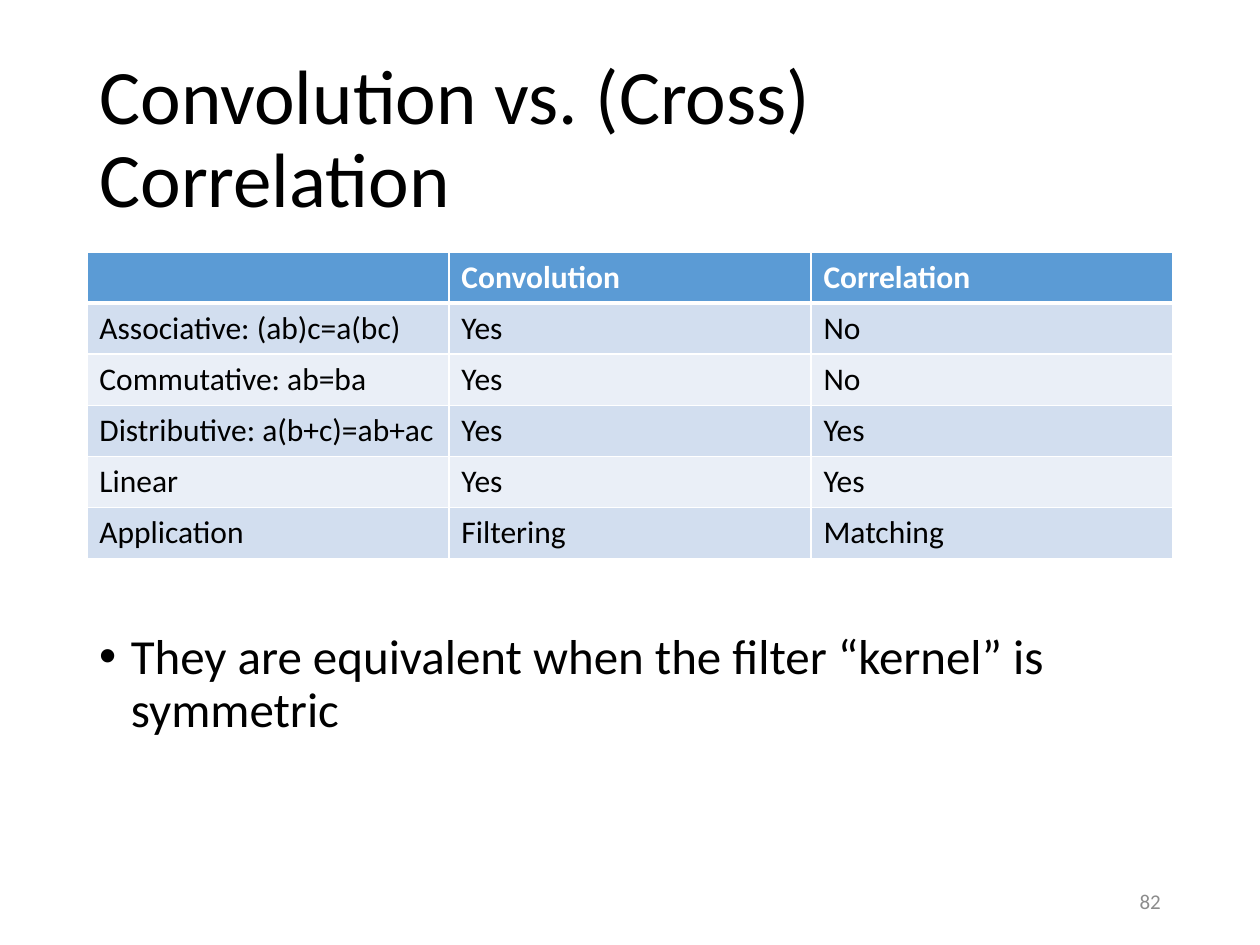
from lxml import etree
from pptx import Presentation
from pptx.dml.color import RGBColor
from pptx.enum.text import MSO_ANCHOR, PP_ALIGN
from pptx.oxml.ns import qn
from pptx.util import Cm, Pt

MIDDLE, TOP = MSO_ANCHOR.MIDDLE, MSO_ANCHOR.TOP
LEFT_ALIGN, RIGHT_ALIGN = PP_ALIGN.LEFT, PP_ALIGN.RIGHT
TITLE_ONLY = 5

BLACK = RGBColor(0x00, 0x00, 0x00)
WHITE = RGBColor(0xFF, 0xFF, 0xFF)
GRAY = RGBColor(0x8C, 0x8C, 0x8C)
HEADER_BLUE = RGBColor(0x5B, 0x9B, 0xD5)
BANDS = (RGBColor(0xEA, 0xEF, 0xF7), RGBColor(0xD2, 0xDE, 0xEF))

FONT = "Calibri"
MARGIN = Cm(1.75)
CONTENT_WIDTH = Cm(21.9)
ROW_HEIGHT = Cm(1.03)

COMPARISON = (
    ("", "Convolution", "Correlation"),
    ("Associative: (ab)c=a(bc)", "Yes", "No"),
    ("Commutative: ab=ba", "Yes", "No"),
    ("Distributive: a(b+c)=ab+ac", "Yes", "Yes"),
    ("Linear", "Yes", "Yes"),
    ("Application", "Filtering", "Matching"),
)


def add_run(para, text, size, color, bold=False):
    span = para.add_run()
    span.text = text
    span.font.name = FONT
    span.font.size = Pt(size)
    span.font.bold = bold
    span.font.color.rgb = color


def set_bullet(para, indent):
    properties = para._p.get_or_add_pPr()
    properties.set("marL", str(indent))
    properties.set("indent", str(-indent))
    etree.SubElement(properties, qn("a:buFont"), typeface="Arial")
    etree.SubElement(properties, qn("a:buChar"), char="•")


def set_borders(cell, widths):
    """Draw white cell borders; widths maps side letters to points."""
    properties = cell._tc.get_or_add_tcPr()
    for position, side in enumerate("LRTB"):
        line = etree.Element(qn(f"a:ln{side}"), w=str(Pt(widths[side])))
        fill = etree.SubElement(line, qn("a:solidFill"))
        etree.SubElement(fill, qn("a:srgbClr"), val=str(WHITE))
        properties.insert(position, line)


def add_title(page, text):
    title = page.shapes.title
    title.left, title.top = MARGIN, Cm(1.01)
    title.width, title.height = CONTENT_WIDTH, Cm(3.68)
    frame = title.text_frame
    frame.word_wrap = True
    frame.vertical_anchor = MIDDLE
    para = frame.paragraphs[0]
    para.alignment = LEFT_ALIGN
    para.line_spacing = 0.9
    add_run(para, text, 44, BLACK)


def add_text_box(page, left, top, width, height, anchor):
    """Add an empty wrapping box and return its first paragraph."""
    frame = page.shapes.add_textbox(left, top, width, height).text_frame
    frame.word_wrap = True
    frame.vertical_anchor = anchor
    return frame.paragraphs[0]


def add_comparison_table(page):
    rows, columns = len(COMPARISON), len(COMPARISON[0])
    table = page.shapes.add_table(
        rows, columns, MARGIN, Cm(5.08), CONTENT_WIDTH, ROW_HEIGHT * rows
    ).table
    for row_index, values in enumerate(COMPARISON):
        header = row_index == 0
        table.rows[row_index].height = ROW_HEIGHT
        widths = {"L": 1, "R": 1, "T": 3 if row_index == 1 else 1, "B": 3 if header else 1}
        for column_index, value in enumerate(values):
            cell = table.cell(row_index, column_index)
            cell.fill.solid()
            cell.fill.fore_color.rgb = HEADER_BLUE if header else BANDS[row_index % 2]
            set_borders(cell, widths)
            if value:
                para = cell.text_frame.paragraphs[0]
                add_run(para, value, 18, WHITE if header else BLACK, bold=header)


def main():
    deck = Presentation()
    deck.slide_width, deck.slide_height = Cm(25.4), Cm(19.05)
    page = deck.slides.add_slide(deck.slide_layouts[TITLE_ONLY])

    add_title(page, "Convolution vs. (Cross) Correlation")

    number = add_text_box(page, Cm(17.93), Cm(17.65), Cm(5.72), Cm(1.02), MIDDLE)
    number.alignment = RIGHT_ALIGN
    add_run(number, "82", 12, GRAY)

    add_comparison_table(page)

    remark = add_text_box(page, MARGIN, Cm(12.62), CONTENT_WIDTH, Cm(4.55), TOP)
    set_bullet(remark, Cm(0.64))
    remark.line_spacing = 0.9
    add_run(remark, "They are equivalent when the filter “kernel” is symmetric", 28, BLACK)

    deck.save("out.pptx")


if __name__ == "__main__":
    main()
